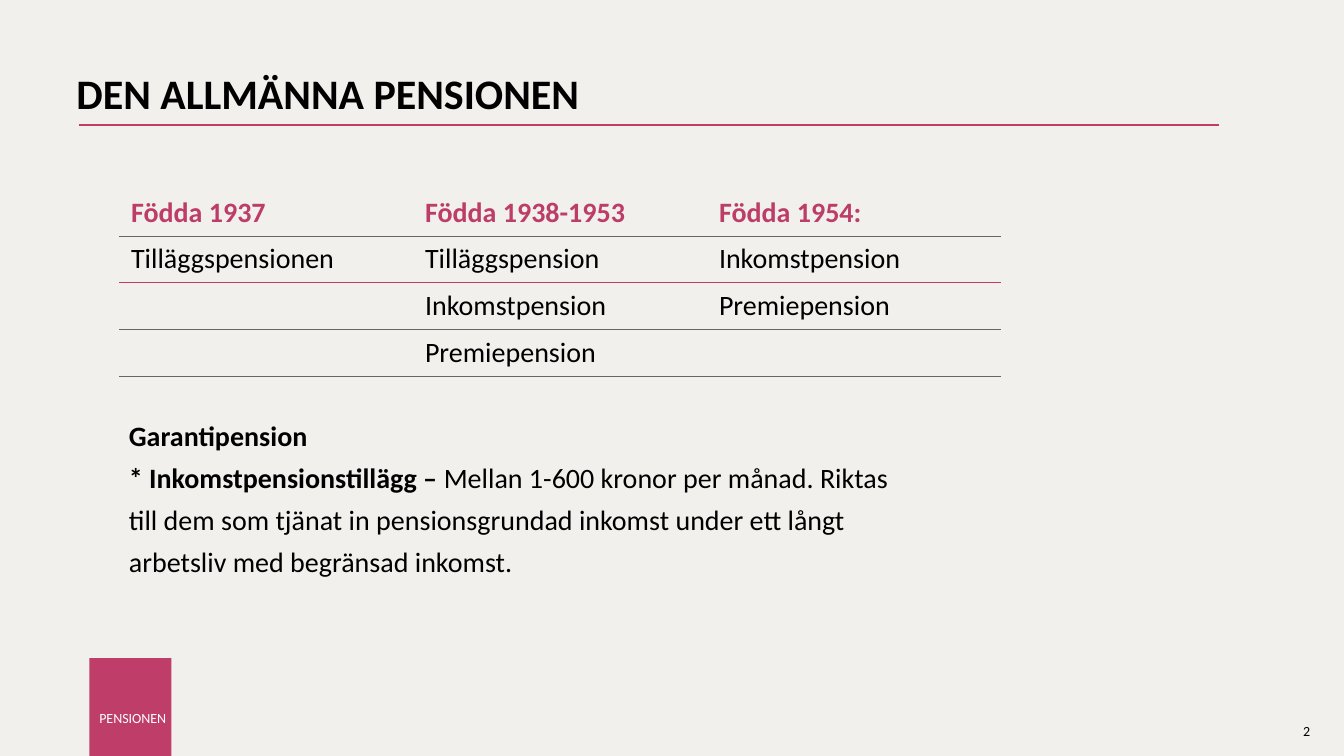
from dataclasses import dataclass
from typing import NamedTuple

from lxml import etree
from pptx import Presentation
from pptx.dml.color import RGBColor
from pptx.enum.shapes import MSO_CONNECTOR, MSO_SHAPE
from pptx.enum.text import MSO_ANCHOR, PP_ALIGN
from pptx.oxml.ns import qn
from pptx.util import Length, Pt

STRAIGHT = MSO_CONNECTOR.STRAIGHT
RECTANGLE = MSO_SHAPE.RECTANGLE
MIDDLE = MSO_ANCHOR.MIDDLE
LEFT = PP_ALIGN.LEFT


@dataclass(frozen=True)
class Theme:
    font: str = "Calibri"
    paper: str = "F1F0EC"
    accent: str = "BE3E69"
    heading: str = "BD3D69"
    ink: str = "000000"
    rule: str = "666666"
    white: str = "FFFFFF"
    title_size: float = 30
    body_size: float = 20
    small_size: float = 10


class Area(NamedTuple):
    left: float
    top: float
    width: float
    height: float

    def lengths(self) -> list[Length]:
        return [Pt(value) for value in self]


class Label(NamedTuple):
    text: str
    area: Area
    size: float
    bold: bool = False
    line_spacing: float | None = None


THEME = Theme()

LABELS = [
    Label("2", Area(923.8, 512.6, 28.8, 19.4), THEME.small_size),
    Label("DEN ALLMÄNNA PENSIONEN", Area(47.5, 49, 828, 104.4),
          THEME.title_size, bold=True, line_spacing=0.9),
]

PENSION_ROWS = [
    ["Födda 1937", "Födda 1938-1953", "Födda 1954:"],
    ["Tilläggspensionen", "Tilläggspension", "Inkomstpension"],
    ["", "Inkomstpension", "Premiepension"],
    ["", "Premiepension", ""],
]
ROW_RULES = [THEME.rule, THEME.accent, THEME.rule, THEME.rule]

NOTES = [
    [("Garantipension", True)],
    [("* Inkomstpensionstillägg – ", True),
     ("Mellan 1-600 kronor per månad. Riktas till dem som tjänat in "
      "pensionsgrundad inkomst under ett långt arbetsliv med begränsad "
      "inkomst.", False)],
]


def add_span(para, text: str, *, size: float, color: str = THEME.ink,
             bold: bool = False) -> None:
    span = para.add_run()
    span.text = text
    span.font.name = THEME.font
    span.font.size = Pt(size)
    span.font.bold = bold
    span.font.color.rgb = RGBColor.from_string(color)


def add_text_frame(page, area: Area):
    frame = page.shapes.add_textbox(*area.lengths()).text_frame
    frame.word_wrap = True
    return frame


def add_label(page, label: Label) -> None:
    para = add_text_frame(page, label.area).paragraphs[0]
    para.line_spacing = label.line_spacing
    add_span(para, label.text, size=label.size, bold=label.bold)


def add_title_rule(page) -> None:
    line = page.shapes.add_connector(
        STRAIGHT, Pt(56.2), Pt(89.3), Pt(870.5), Pt(89.3))
    line.line.color.rgb = RGBColor.from_string(THEME.accent)
    line.line.width = Pt(1.5)
    etree.SubElement(line._element.spPr, qn("a:effectLst"))


def set_border(cell, side: str, color: str | None) -> None:
    """Draw one cell side, or clear it when color is None."""
    border = etree.SubElement(cell._tc.get_or_add_tcPr(), qn(f"a:ln{side}"))
    if color is None:
        etree.SubElement(border, qn("a:noFill"))
        return
    border.set("w", str(Pt(0.5)))
    fill = etree.SubElement(border, qn("a:solidFill"))
    etree.SubElement(fill, qn("a:srgbClr")).set("val", color)


def add_pension_table(page) -> None:
    row_height, column_width = 33.3, 210
    row_count, column_count = len(PENSION_ROWS), len(PENSION_ROWS[0])
    area = Area(85, 135.4, column_width * column_count, row_height * row_count)
    table = page.shapes.add_table(
        row_count, column_count, *area.lengths()).table
    table.first_row = table.horz_banding = False
    for row, texts in enumerate(PENSION_ROWS):
        table.rows[row].height = Pt(row_height)
        header = row == 0
        borders = {"L": None, "R": None,
                   "T": None if header else ROW_RULES[row - 1],
                   "B": ROW_RULES[row]}
        for column, text in enumerate(texts):
            cell = table.cell(row, column)
            cell.margin_left = cell.margin_right = Pt(8.6)
            cell.margin_top = cell.margin_bottom = Pt(4.3)
            for side, color in borders.items():
                set_border(cell, side, color)
            cell.fill.background()
            if text:
                add_span(cell.text_frame.paragraphs[0], text,
                         size=THEME.body_size, bold=header,
                         color=THEME.heading if header else THEME.ink)


def add_notes(page) -> None:
    frame = add_text_frame(page, Area(85, 289.4, 576, 145.4))
    for index, spans in enumerate(NOTES):
        para = frame.add_paragraph() if index else frame.paragraphs[0]
        para.line_spacing = Pt(30)
        for text, bold in spans:
            add_span(para, text, size=THEME.body_size, bold=bold)


def add_section_tab(page) -> None:
    tab = page.shapes.add_shape(
        RECTANGLE, *Area(63.8, 470, 58.7, 70).lengths())
    tab.shadow.inherit = False
    tab.fill.solid()
    tab.fill.fore_color.rgb = RGBColor.from_string(THEME.accent)
    tab.line.fill.background()
    frame = tab.text_frame
    frame.word_wrap = False
    frame.vertical_anchor = MIDDLE
    frame.margin_left, frame.margin_right = Pt(7.2), Pt(2.9)
    frame.margin_top, frame.margin_bottom = Pt(20.6), Pt(3.6)
    para = frame.paragraphs[0]
    para.alignment = LEFT
    para.line_spacing = 0.9
    add_span(para, "PENSIONEN", size=THEME.small_size, color=THEME.white)


def main() -> None:
    deck = Presentation()
    deck.slide_width, deck.slide_height = Pt(960), Pt(540)
    page = deck.slides.add_slide(deck.slide_layouts[6])
    page.background.fill.solid()
    page.background.fill.fore_color.rgb = RGBColor.from_string(THEME.paper)
    add_title_rule(page)
    for label in LABELS:
        add_label(page, label)
    add_pension_table(page)
    add_section_tab(page)
    add_notes(page)
    deck.save("out.pptx")


if __name__ == "__main__":
    main()
